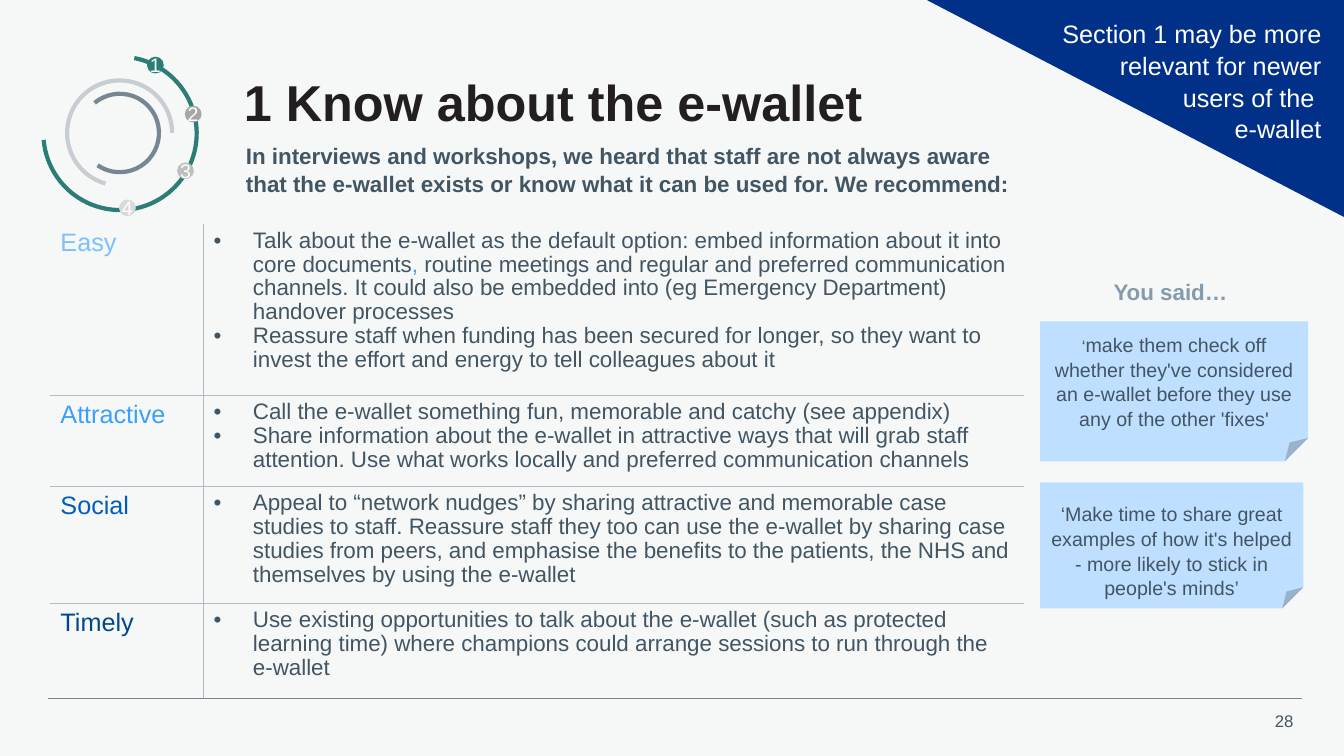
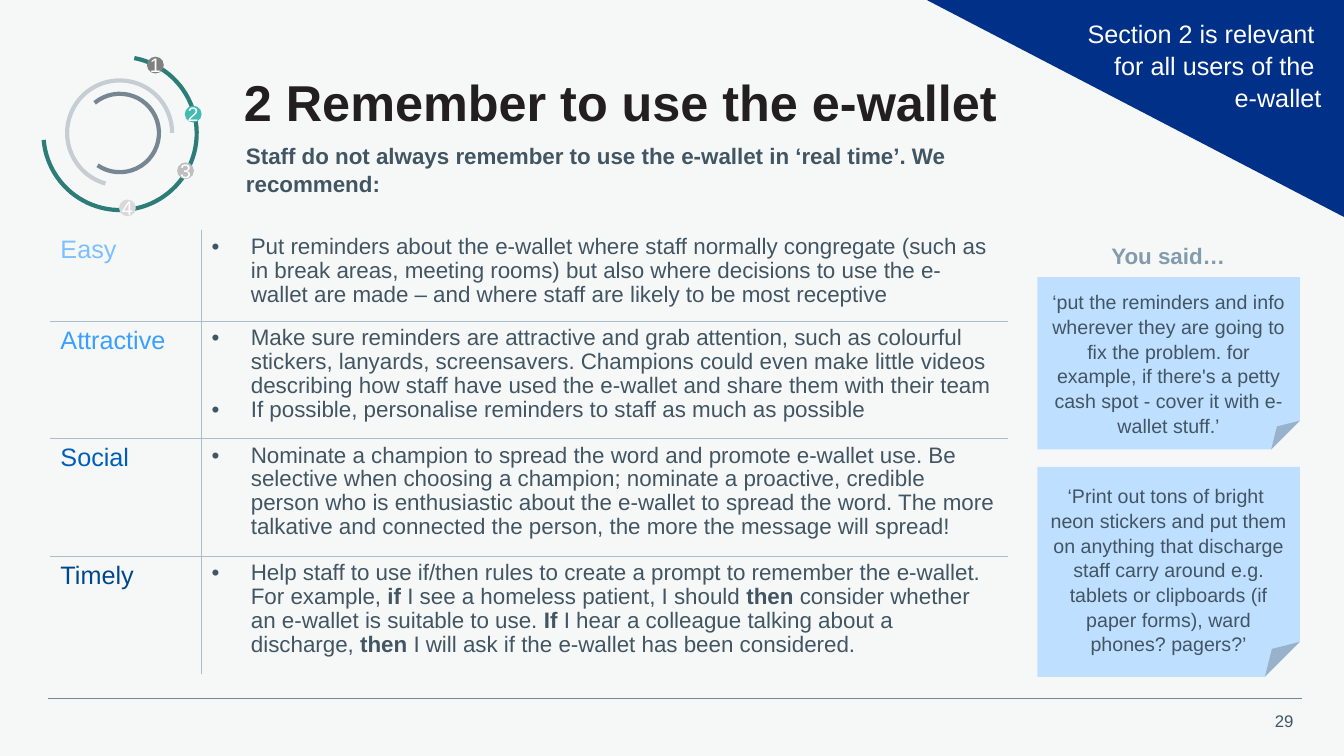
from lxml.etree import SubElement
from pptx import Presentation
from pptx.dml.color import RGBColor
from pptx.enum.shapes import MSO_CONNECTOR, MSO_SHAPE as SHAPE
from pptx.enum.text import MSO_ANCHOR as ANCHOR, MSO_AUTO_SIZE, PP_ALIGN as ALIGN
from pptx.oxml.ns import qn
from pptx.util import Pt

FONT = "Arial"
COLOURS = {
    "background": "F6F8F8", "title": "231F20", "text": "425563", "rule": "768692",
    "grid": "ACBCC8", "quote": "BEDFFF", "quote_heading": "839BAC",
    "corner": "003087", "white": "FFFFFF",
    "easy": "7DBFFF", "attractive": "3B9FFF", "social": "005EB8", "timely": "00478A",
    "inner_arc": "768692", "middle_arc": "C7CED3", "outer_arc": "2C7D77",
    "step_1": "2C7D77", "step_2": "42BBB2",
}
STEP_GREYS = ["808080", "A6A6A6", "BFBFBF", "D9D9D9"]
STEP_PLACES = [(105, 40.5), (132, 75.5), (126.5, 116), (85, 142.5)]
ARCS = [  # left, top, size, rotation, colour
    (48, 57.5, 75, 0, "middle_arc"),
    (57.5, 67, 56, 124.5, "inner_arc"),
    (31, 40.5, 109.5, 175.1, "outer_arc"),
]
NO_STYLE_TABLE = "{2D5ABB26-0587-4C30-8999-92F81FD0307C}"
SPACING = 1.05
BOLD = {"bold": True}


def rgb(name):
    return RGBColor.from_string(COLOURS.get(name, name))


class Deck:
    """Holds the shared style and the slide being built."""

    def __init__(self, first_number):
        self.presentation = Presentation()
        self.presentation.slide_width, self.presentation.slide_height = Pt(960), Pt(540)
        self.presentation.element.set("firstSlideNum", str(first_number))
        fill = self.presentation.slide_master.background.fill
        fill.solid()
        fill.fore_color.rgb = rgb("background")
        self.number = first_number - 1
        self.slide = None

    def new_slide(self, title, lead, lead_width):
        self.slide = self.presentation.slides.add_slide(self.presentation.slide_layouts[1])
        self.number += 1
        self.place(self.slide.shapes.title, 167, 47, 625, 51, [title],
                   size=36, colour="title", bold=True, anchor=ANCHOR.MIDDLE, spacing=1)
        self.place(self.slide.placeholders[1], 168.5, 97, lead_width, 46, [lead],
                   size=16, bold=True)
        self.footer()

    def place(self, shape, left, top, width, height, paragraphs, anchor=ANCHOR.TOP, **style):
        shape.left, shape.top = Pt(left), Pt(top)
        shape.width, shape.height = Pt(width), Pt(height)
        frame = shape.text_frame
        frame.auto_size = MSO_AUTO_SIZE.NONE
        frame.word_wrap = True
        frame.vertical_anchor = anchor
        self.set_text(frame, paragraphs, **style)

    def set_text(self, frame, paragraphs, size, colour="text", bold=False,
                 align=ALIGN.LEFT, spacing=SPACING, hanging=0):
        """Fill a frame; a paragraph is a string or a list of strings and (string, font changes)."""
        for index, content in enumerate(paragraphs):
            paragraph = frame.add_paragraph() if index else frame.paragraphs[0]
            paragraph.alignment = align
            paragraph.line_spacing = spacing
            paragraph.space_before = Pt(0)
            properties = paragraph._p.get_or_add_pPr()
            properties.set("marL", str(Pt(hanging)))
            properties.set("indent", str(-Pt(hanging)))
            if hanging:
                SubElement(properties, qn("a:buFont"), typeface=FONT)
                SubElement(properties, qn("a:buChar"), char="•")
            else:
                SubElement(properties, qn("a:buNone"))
            self.style_font(paragraph.font, size, colour, bold)
            for part in [content] if isinstance(content, str) else content:
                text, changes = (part, {}) if isinstance(part, str) else part
                run = paragraph.add_run()
                run.text = text
                if "bold" in changes:
                    run.font.bold = changes["bold"]
                if "size" in changes:
                    run.font.size = Pt(changes["size"])
                if "colour" in changes:
                    run.font.color.rgb = rgb(changes["colour"])

    def style_font(self, font, size, colour, bold=False):
        font.name, font.size, font.bold = FONT, Pt(size), bold
        font.color.rgb = rgb(colour)

    def text(self, left, top, width, height, paragraphs, **style):
        box = self.slide.shapes.add_textbox(0, 0, 0, 0)
        self.place(box, left, top, width, height, paragraphs, **style)

    def shape(self, kind, left, top, width, height, fill):
        shape = self.slide.shapes.add_shape(kind, Pt(left), Pt(top), Pt(width), Pt(height))
        shape.shadow.inherit = False
        shape.line.fill.background()
        if fill:
            shape.fill.solid()
            shape.fill.fore_color.rgb = rgb(fill)
        else:
            shape.fill.background()
        return shape

    def footer(self):
        rule = self.slide.shapes.add_connector(
            MSO_CONNECTOR.STRAIGHT, Pt(34), Pt(499), Pt(930), Pt(499))
        rule.line.color.rgb = rgb("rule")
        rule.line.width = Pt(0.5)
        SubElement(rule._element.spPr, qn("a:effectLst"))

        box = self.slide.shapes.add_textbox(Pt(891), Pt(504), Pt(40), Pt(22))
        paragraph = box.text_frame.paragraphs[0]
        paragraph.alignment = ALIGN.RIGHT
        self.style_font(paragraph.font, 12, "text")
        field = SubElement(paragraph._p, qn("a:fld"), type="slidenum",
                           id="{B6F15528-21DE-4FAA-801E-634DDDAF4B2B}")
        SubElement(field, qn("a:rPr"), lang="en-GB", sz="1200")
        SubElement(field, qn("a:t")).text = str(self.number)

    def corner(self, paragraphs):
        triangle = self.shape(SHAPE.RIGHT_TRIANGLE, 662, 0, 298, 155, "corner")
        triangle.rotation = 180
        self.text(747, 8.5, 204, 94, paragraphs, size=18, colour="white", align=ALIGN.RIGHT)

    def tracker(self, active):
        """Draw the three arcs and four numbered steps, with one step highlighted."""
        for left, top, size, rotation, colour in ARCS:
            arc = self.shape(SHAPE.ARC, left, top, size, size, None)
            arc.adjustments[0], arc.adjustments[1] = 63.376, 0
            arc.rotation = rotation
            arc.line.color.rgb = rgb(colour)
            arc.line.width = Pt(3)
        for step, ((left, top), grey) in enumerate(zip(STEP_PLACES, STEP_GREYS), 1):
            fill = f"step_{step}" if step == active else grey
            frame = self.shape(SHAPE.OVAL, left, top, 12, 12, fill).text_frame
            frame.margin_left = frame.margin_right = frame.margin_top = frame.margin_bottom = 0
            frame.word_wrap = False
            frame.vertical_anchor = ANCHOR.MIDDLE
            self.set_text(frame, [str(step)], size=14, colour="white",
                          align=ALIGN.CENTER, spacing=1)

    def quote_heading(self, left, top):
        self.text(left, top, 156, 27, ["You said…"], size=16, colour="quote_heading",
                  bold=True, align=ALIGN.CENTER)

    def quote(self, left, top, width, height, inset, paragraphs):
        note = self.shape(SHAPE.FOLDED_CORNER, left, top, width, height, "quote")
        note.text_frame.margin_top = Pt(inset)
        self.place(note, left, top, width, height, paragraphs, size=14, align=ALIGN.CENTER)

    def table(self, top, widths, heights, advice):
        """Draw the advice rows, ruled only between cells."""
        table = self.slide.shapes.add_table(
            len(advice), 2, Pt(36), Pt(top), Pt(sum(widths)), Pt(sum(heights))).table
        table.first_row = table.horz_banding = False
        table._tbl.tblPr.find(qn("a:tableStyleId")).text = NO_STYLE_TABLE
        for column, width in zip(table.columns, widths):
            column.width = Pt(width)
        for index, (label, bullets) in enumerate(advice.items()):
            table.rows[index].height = Pt(heights[index])
            name, detail = table.cell(index, 0), table.cell(index, 1)
            self.set_text(name.text_frame, [label], size=18, colour=label.lower(), spacing=1)
            self.set_text(detail.text_frame, bullets, size=16, spacing=0.96, hanging=28)
            level_sides = (["lnT"] if index else []) + (["lnB"] if index < len(advice) - 1 else [])
            for cell, side in ((name, "lnR"), (detail, "lnL")):
                self.borders(cell, [side] + level_sides)
                cell.fill.background()

    def borders(self, cell, sides):
        properties = cell._tc.get_or_add_tcPr()
        for side in sides:
            line = SubElement(properties, qn(f"a:{side}"), w=str(Pt(1)))
            fill = SubElement(line, qn("a:solidFill"))
            SubElement(fill, qn("a:srgbClr"), val=COLOURS["grid"])


def know_slide(deck):
    deck.new_slide(
        "1 Know about the e-wallet",
        "In interviews and workshops, we heard that staff are not always aware that the "
        "e-wallet exists or know what it can be used for. We recommend:", 572)
    deck.table(160, [109.5, 586], [122.5, 65, 83.5, 68], {
        "Easy": [
            ["Talk about the e-wallet as the default option: embed information about it into "
             "core documents", (", ", {"colour": "attractive"}),
             "routine meetings and regular and preferred communication channels. It could also "
             "be embedded into (eg Emergency Department) handover processes"],
            "Reassure staff when funding has been secured for longer, so they want to invest "
            "the effort and energy to tell colleagues about it"],
        "Attractive": [
            "Call the e-wallet something fun, memorable and catchy (see appendix)",
            "Share information about the e-wallet in attractive ways that will grab staff "
            "attention. Use what works locally and preferred communication channels"],
        "Social": [
            "Appeal to “network nudges” by sharing attractive and memorable case studies to "
            "staff. Reassure staff they too can use the e-wallet by sharing case studies from "
            "peers, and emphasise the benefits to the patients, the NHS and themselves by using "
            "the e-wallet"],
        "Timely": [
            "Use existing opportunities to talk about the e-wallet (such as protected learning "
            "time) where champions could arrange sessions to run through the e-wallet"],
    })
    deck.quote_heading(758, 194.5)
    deck.quote(743, 229.5, 191.5, 100, 7.5, [
        [("‘", {"size": 12}), "make them check off whether they've considered an e-wallet before "
         "they use any of the other 'fixes'"]])
    deck.quote(743, 344.5, 188, 90, 13.5, [
        "‘Make time to share great examples of how it's helped - more likely to stick in "
        "people's minds’"])
    deck.tracker(active=1)
    deck.corner(["Section 1 may be more relevant for newer", "users of the ", "e-wallet"])


def remember_slide(deck):
    deck.new_slide(
        "2 Remember to use the e-wallet",
        "Staff do not always remember to use the e-wallet in ‘real time’. We recommend:", 530)
    deck.table(164.5, [108, 576], [65, 84, 84, 84], {
        "Easy": [
            "Put reminders about the e-wallet where staff normally congregate (such as in break "
            "areas, meeting rooms) but also where decisions to use the e-wallet are made – and "
            "where staff are likely to be most receptive"],
        "Attractive": [
            "Make sure reminders are attractive and grab attention, such as colourful stickers, "
            "lanyards, screensavers. Champions could even make little videos describing how "
            "staff have used the e-wallet and share them with their team",
            "If possible, personalise reminders to staff as much as possible"],
        "Social": [
            "Nominate a champion to spread the word and promote e-wallet use. Be selective when "
            "choosing a champion; nominate a proactive, credible person who is enthusiastic "
            "about the e-wallet to spread the word. The more talkative and connected the person, "
            "the more the message will spread!"],
        "Timely": [
            ["Help staff to use if/then rules to create a prompt to remember the e-wallet. For "
             "example, ", ("if", BOLD), " I see a homeless patient, I should ", ("then", BOLD),
             " consider whether an e-wallet is suitable to use. ", ("If", BOLD),
             " I hear a colleague talking about a discharge, ", ("then", BOLD),
             " I will ask if the e-wallet has been considered."]],
    })
    deck.quote_heading(756.5, 168.5)
    deck.quote(741, 198, 187.5, 123, 8.5, [
        "‘put the reminders and info wherever they are going to fix the problem. for example, "
        "if there's a petty cash spot - cover it with e-wallet stuff.’"])
    deck.quote(741, 333.5, 187.5, 150, 11.5, [
        "‘Print out tons of bright ",
        "neon stickers and put them on anything that discharge staff carry around e.g. tablets "
        "or clipboards (if paper forms), ward phones? pagers?’"])
    deck.tracker(active=2)
    deck.corner(["Section 2 is relevant ", "for all users of the ", "e-wallet"])


def main():
    deck = Deck(first_number=28)
    know_slide(deck)
    remember_slide(deck)
    deck.presentation.save("out.pptx")


if __name__ == "__main__":
    main()
